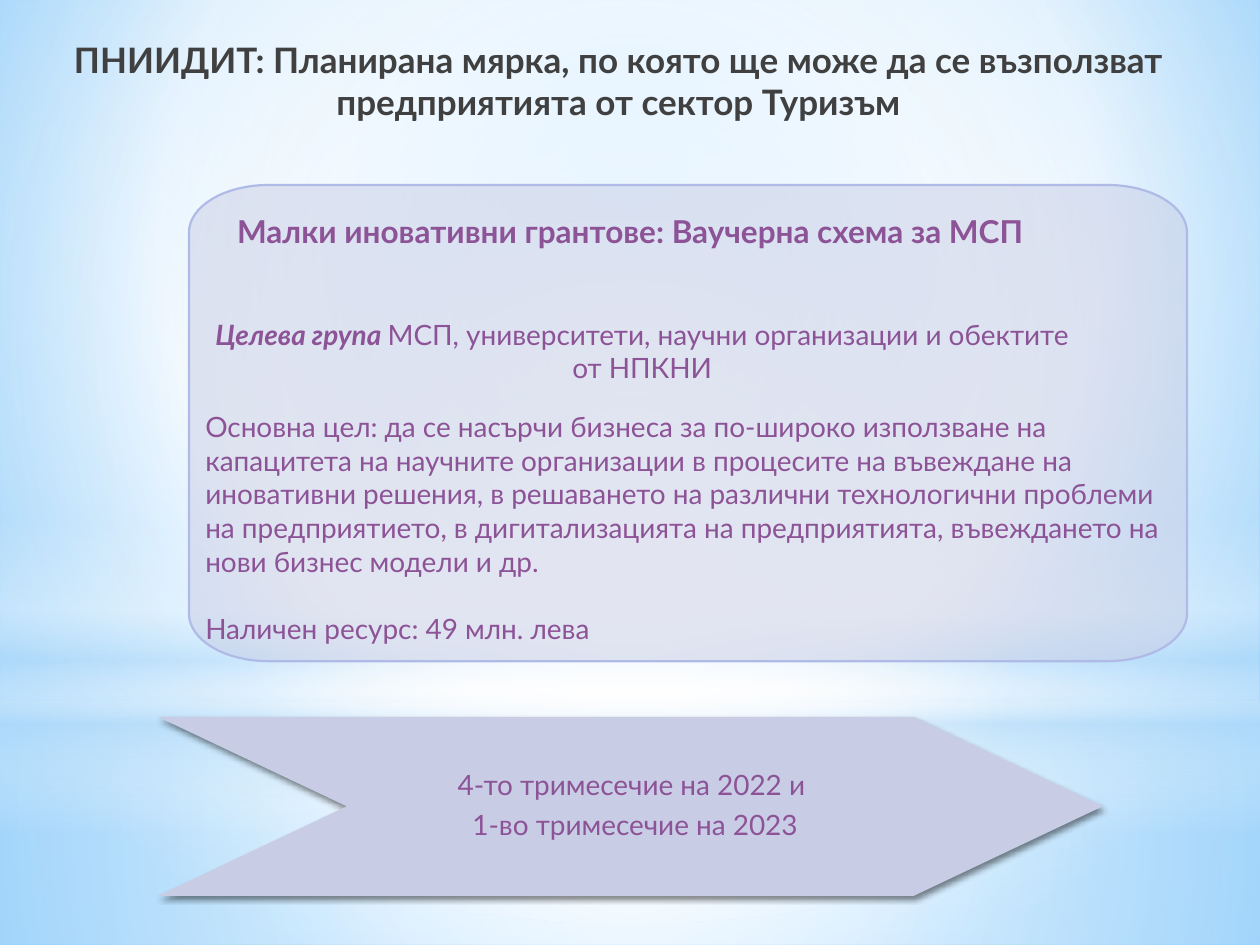
import math

import pptx
import pptx.dml.color
import pptx.enum.shapes
import pptx.enum.text
import pptx.oxml
import pptx.oxml.ns
import pptx.util
from lxml import etree

Cm = pptx.util.Cm
Pt = pptx.util.Pt
qn = pptx.oxml.ns.qn
Align = pptx.enum.text.PP_ALIGN
Anchor = pptx.enum.text.MSO_ANCHOR
Preset = pptx.enum.shapes.MSO_SHAPE

COLORS = {
    "white": "FFFFFF", "sky": "B4DCFA", "sky_mid": "9ED5FF", "sky_deep": "5BB9FF",
    "title": "404040", "text": "8D5397", "panel": "C8CDE5", "border": "AFBBE6",
    "shadow": "000000",
}
FONT = "Lato"
WIDTH, HEIGHT = 25.4, 19.05
CENTER = (50, 50, 50, 50)


def rgb(name):
    return pptx.dml.color.RGBColor.from_string(COLORS[name])


def color_element(parent, name, opacity):
    color = etree.SubElement(parent, qn("a:srgbClr"), val=COLORS[name])
    if opacity < 100:
        etree.SubElement(color, qn("a:alpha"), val=str(opacity * 1000))


def set_gradient(holder, stops, focus=None):
    """Swap the solid fill in holder for a gradient: circular around focus, else top-down."""
    gradient = etree.Element(qn("a:gradFill"), rotWithShape="1")
    stop_list = etree.SubElement(gradient, qn("a:gsLst"))
    for position, name, opacity in stops:
        stop = etree.SubElement(stop_list, qn("a:gs"), pos=str(position * 1000))
        color_element(stop, name, opacity)
    if focus:
        circle = etree.SubElement(gradient, qn("a:path"))
        circle.set("path", "circle")
        sides = {side: str(value * 1000) for side, value in zip("ltrb", focus)}
        etree.SubElement(circle, qn("a:fillToRect"), **sides)
    else:
        etree.SubElement(gradient, qn("a:lin"), ang="5400000", scaled="0")
    solid = holder.find(qn("a:solidFill"))
    holder.replace(solid, gradient)


def paint(shape, fill, line=None, opacity=100):
    shape.shadow.inherit = False
    shape.fill.solid()
    shape.fill.fore_color.rgb = rgb(fill)
    color = shape.element.spPr.find(qn("a:solidFill"))[0]
    if opacity < 100:
        etree.SubElement(color, qn("a:alpha"), val=str(opacity * 1000))
    if line:
        shape.line.color.rgb = rgb(line)
        shape.line.width = Pt(1.25)
    else:
        shape.line.fill.background()


def add_outline(slide, points):
    start, *rest = [(Cm(x), Cm(y)) for x, y in points]
    builder = slide.shapes.build_freeform(*start)
    builder.add_line_segments(rest, close=True)
    return builder.convert_to_shape()


def write(shape, paragraphs, size, color="text", align=Align.CENTER,
          anchor=Anchor.TOP, insets=(0.25, 0.13, 0.25, 0.13)):
    """Fill shape with paragraphs, each a list of (text, bold, italic) runs."""
    frame = shape.text_frame
    frame.word_wrap = True
    frame.vertical_anchor = anchor
    (frame.margin_left, frame.margin_top,
     frame.margin_right, frame.margin_bottom) = map(Cm, insets)
    for index, runs in enumerate(paragraphs):
        paragraph = frame.add_paragraph() if index else frame.paragraphs[0]
        paragraph.alignment = align
        for text, bold, italic in runs:
            run = paragraph.add_run()
            run.text = text
            run.font.name, run.font.size = FONT, Pt(size)
            run.font.bold, run.font.italic = bold, italic
            run.font.color.rgb = rgb(color)
    return frame


def add_textbox(slide, box, paragraphs, size, **options):
    write(slide.shapes.add_textbox(*map(Cm, box)), paragraphs, size, **options)


def backdrop(slide):
    slide.background.fill.solid()
    set_gradient(slide.element.find(".//" + qn("p:bgPr")),
                 [(0, "sky_mid", 100), (60, "white", 100), (100, "sky_deep", 100)],
                 (20, 10, 20, 60))
    horizon = 14.17
    layers = [
        (Preset.RECTANGLE, horizon, HEIGHT - horizon, CENTER,
         [(0, "white", 91), (37, "white", 76), (100, "sky", 79)]),
        (Preset.RECTANGLE, 0, horizon, CENTER,
         [(0, "white", 89), (48, "white", 62), (100, "sky", 79)]),
        (Preset.RECTANGLE, 10.46, 6.35, None,
         [(0, "white", 0), (29, "white", 30), (45, "sky", 40),
          (55, "white", 26), (65, "sky", 60), (100, "white", 0)]),
        (Preset.OVAL, 4.45, horizon, CENTER,
         [(0, "white", 100), (56, "white", 0)]),
    ]
    for preset, top, height, focus, stops in layers:
        layer = slide.shapes.add_shape(preset, 0, Cm(top), Cm(WIDTH), Cm(height))
        paint(layer, "white")
        set_gradient(layer.element.spPr, stops, focus)


def measure_card(slide, left, top, width, height):
    """Panel with elliptical corners that holds the goal and the budget."""
    radius_x, radius_y, steps = 1.6, 0.96, 16
    corners = [(left + width - radius_x, top + height - radius_y),
               (left + radius_x, top + height - radius_y),
               (left + radius_x, top + radius_y),
               (left + width - radius_x, top + radius_y)]
    points = []
    for quarter, (x, y) in enumerate(corners):
        for step in range(steps + 1):
            angle = (quarter + step / steps) * math.pi / 2
            points.append((x + radius_x * math.cos(angle), y + radius_y * math.sin(angle)))
    card = add_outline(slide, points)
    paint(card, "panel", "border", opacity=50)
    goal = ("Основна цел: да се насърчи бизнеса за по-широко използване на капацитета "
            "на научните организации в процесите на въвеждане на иновативни решения, "
            "в решаването на различни технологични проблеми на предприятието, "
            "в дигитализацията на предприятията, въвеждането на нови бизнес модели и др.")
    frame = write(card, [[(goal, False, False)],
                         [("Наличен ресурс: 49 млн. лева", False, False)]],
                  16, align=Align.LEFT, anchor=Anchor.BOTTOM, insets=(0.33,) * 4)
    frame.paragraphs[1].space_before = Pt(19.2)


def card_captions(slide, left, top):
    add_textbox(slide, (left - 0.63, top + 0.41, 19.05, 1.02),
                [[("Малки иновативни грантове: Ваучерна схема за МСП", True, False)]], 18)
    add_textbox(slide, (left, top + 2.54, 18.42, 1.63),
                [[("Целева група ", True, True),
                  ("МСП, университети, научни организации и обектите ", False, False)],
                 [("от НПКНИ ", False, False)]], 16)


def timeline_arrow(slide, left, top, width, height):
    point = 3.81
    right, bottom, middle = left + width, top + height, top + height / 2
    arrow = add_outline(slide, [(left, top), (right - point, top), (right, middle),
                                (right - point, bottom), (left, bottom),
                                (left + point, middle)])
    paint(arrow, "panel")
    effects = arrow.element.spPr.find(qn("a:effectLst"))
    shadow = etree.SubElement(effects, qn("a:outerShdw"), blurRad=str(Pt(3.1)),
                              dist=str(Pt(1.8)), dir="5400000", rotWithShape="0")
    color_element(shadow, "shadow", 45)
    frame = write(arrow, [[("4-то тримесечие на 2022 и ", False, False)],
                          [("1-во тримесечие на 2023", False, False)]],
                  16, anchor=Anchor.MIDDLE, insets=(2, 0.1, 1.8, 0.1))
    for paragraph in frame.paragraphs:
        paragraph.line_spacing = 0.9
        paragraph.space_after = Pt(5.6)


def main():
    deck = pptx.Presentation()
    deck.slide_width, deck.slide_height = Cm(WIDTH), Cm(HEIGHT)
    slide = deck.slides.add_slide(deck.slide_layouts[6])
    backdrop(slide)
    add_textbox(slide, (0, 0.61, 24.94, 2.01),
                [[("ПНИИДИТ: Планирана мярка, по която ще може да се възползват "
                   "предприятията от сектор Туризъм", True, False)]],
                20, color="title", anchor=Anchor.MIDDLE)
    measure_card(slide, 3.81, 3.73, 20.12, 9.6)
    timeline_arrow(slide, 3.18, 14.45, 19.05, 3.61)
    card_captions(slide, 3.81, 3.73)
    deck.save("out.pptx")


if __name__ == "__main__":
    main()
